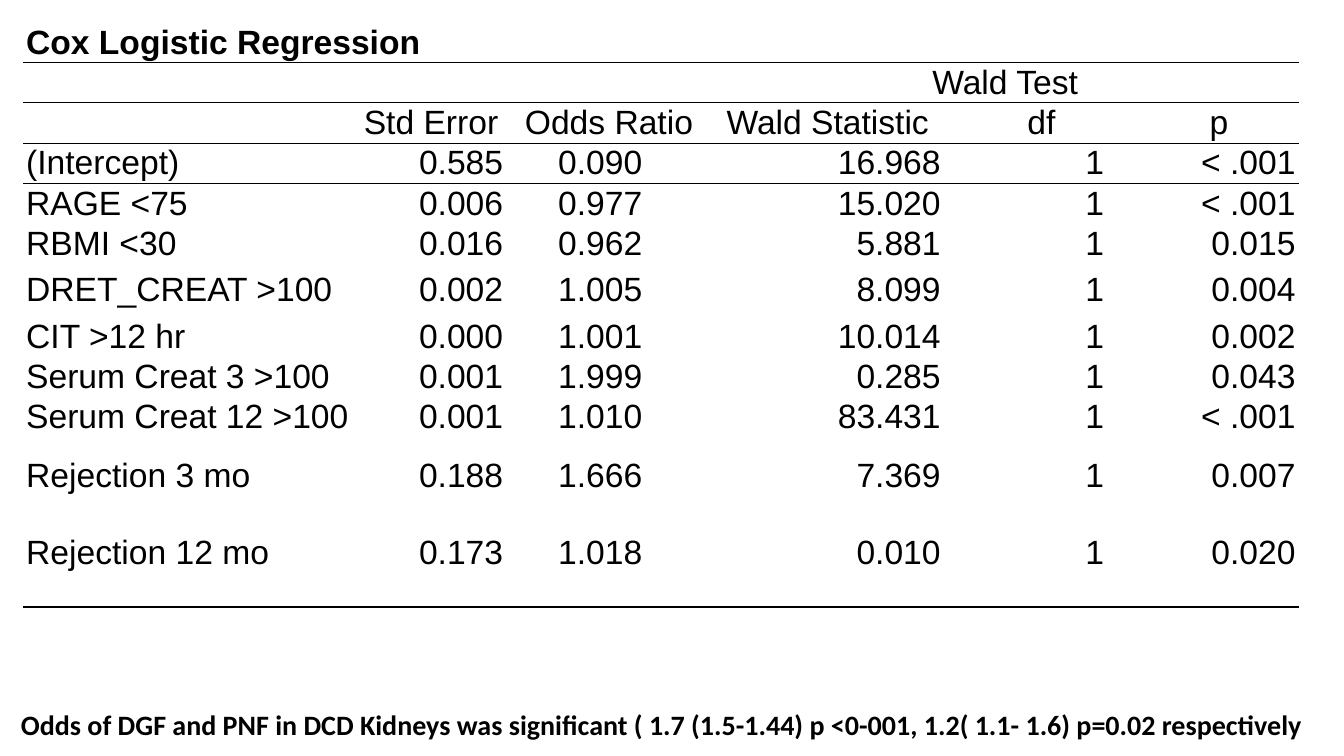
from lxml import etree
from pptx import Presentation, util as u
from pptx.dml.color import RGBColor
from pptx.enum import text
from pptx.oxml.ns import qn

PX = 9144  # one hundredth of an inch
BLACK = "000000"
LEFT, CENTER, RIGHT = text.PP_ALIGN.LEFT, text.PP_ALIGN.CENTER, text.PP_ALIGN.RIGHT
PLAIN_TABLE_STYLE = "{2D5ABB26-0587-4C30-8999-92F81FD0307C}"

COLUMN_WIDTHS = [330, 149, 138, 66, 230, 162, 32, 158]
ROW_HEIGHTS = [40] * 6 + [52] + [40] * 3 + [76, 76, 16]
VALUE_COLUMNS = [0, 1, 2, 4, 5, 7]
HEADINGS = {1: "Std Error", 2: "Odds Ratio", 4: "Wald Statistic", 5: "df", 7: "p"}
FIRST_RESULT_ROW = 3
RESULTS = [
    ("(Intercept)", "0.585", "0.090", "16.968", "1", "< .001"),
    ("RAGE <75", "0.006", "0.977", "15.020", "1", "< .001"),
    ("RBMI <30", "0.016", "0.962", "5.881", "1", "0.015"),
    ("DRET_CREAT >100", "0.002", "1.005", "8.099", "1", "0.004"),
    ("CIT >12 hr", "0.000", "1.001", "10.014", "1", "0.002"),
    ("Serum Creat 3 >100", "0.001", "1.999", "0.285", "1", "0.043"),
    ("Serum Creat 12 >100", "0.001", "1.010", "83.431", "1", "< .001"),
    ("Rejection 3 mo", "0.188", "1.666", "7.369", "1", "0.007"),
    ("Rejection 12 mo", "0.173", "1.018", "0.010", "1", "0.020"),
]
MERGES = [((0, 0), (0, 7)), ((1, 0), (1, 3)), ((1, 4), (1, 7)),
          ((2, 2), (2, 3)), ((2, 5), (2, 6)), ((12, 0), (12, 7))]
FOOTNOTE = ("Odds of DGF and PNF in DCD Kidneys was significant "
            "( 1.7 (1.5-1.44) p <0-001, 1.2( 1.1- 1.6) p=0.02 respectively")


def px(length):
    return u.Emu(length * PX)


def color(hex_code):
    return RGBColor.from_string(hex_code)


def write(frame, words, size=24, font="Arial", bold=False, align=LEFT, ink=BLACK):
    paragraph = frame.paragraphs[0]
    paragraph.alignment = align
    run = paragraph.add_run()
    run.text = words
    run.font.size = u.Pt(size)
    run.font.name = font
    run.font.bold = bold
    run.font.color.rgb = color(ink)


def add_border(cell, side, width):
    line = etree.Element(qn(f"a:{side}"), w=str(u.Pt(width)))
    fill = etree.SubElement(line, qn("a:solidFill"))
    etree.SubElement(fill, qn("a:srgbClr"), val=BLACK)
    cell._tc.get_or_add_tcPr().insert(0, line)


def rule_below(table, row, columns=range(8), width=0.75):
    """Draw a rule under a row, on both cells that share the edge."""
    for column in columns:
        add_border(table.cell(row, column), "lnB", width)
        if row + 1 < len(ROW_HEIGHTS):
            add_border(table.cell(row + 1, column), "lnT", width)


def prepare_cell(cell):
    cell.fill.background()
    cell.vertical_anchor = text.MSO_ANCHOR.MIDDLE
    cell.margin_left = cell.margin_right = px(3)
    cell.margin_top = cell.margin_bottom = px(1)


def shrink_empty(cell):
    """Keep an empty cell from stretching its row."""
    if not cell.text_frame.text:
        paragraph = cell.text_frame.paragraphs[0]._p
        etree.SubElement(paragraph, qn("a:endParaRPr"), sz="800")


def add_regression_table(slide):
    table = slide.shapes.add_table(
        len(ROW_HEIGHTS), len(COLUMN_WIDTHS), px(23), px(22),
        px(sum(COLUMN_WIDTHS)), px(sum(ROW_HEIGHTS))).table
    table.first_row = table.horz_banding = False
    table._tbl.tblPr.find(qn("a:tableStyleId")).text = PLAIN_TABLE_STYLE
    for column, width in zip(table.columns, COLUMN_WIDTHS):
        column.width = px(width)
    for row, height in zip(table.rows, ROW_HEIGHTS):
        row.height = px(height)
    for cell in table.iter_cells():
        prepare_cell(cell)
    for first, last in MERGES:
        table.cell(*first).merge(table.cell(*last))

    write(table.cell(0, 0).text_frame, "Cox Logistic Regression", bold=True)
    write(table.cell(1, 4).text_frame, "Wald Test", align=CENTER)
    for column, heading in HEADINGS.items():
        write(table.cell(2, column).text_frame, heading, align=CENTER)
    for row, result in enumerate(RESULTS, FIRST_RESULT_ROW):
        for column, value in zip(VALUE_COLUMNS, result):
            write(table.cell(row, column).text_frame, value,
                  align=RIGHT if column else LEFT)
    for cell in table.iter_cells():
        shrink_empty(cell)

    # Lower rules first: a cell's top border has to precede its bottom one.
    rule_below(table, 12, width=1.5)
    rule_below(table, 2)
    rule_below(table, 1, columns=range(4, 8))
    rule_below(table, 0)


def add_footnote(slide):
    frame = slide.shapes.add_textbox(px(11), px(697), px(1676), px(44)).text_frame
    frame.word_wrap = True
    frame.auto_size = text.MSO_AUTO_SIZE.SHAPE_TO_FIT_TEXT
    write(frame, FOOTNOTE, size=20, font="Calibri", bold=True)


def main():
    deck = Presentation()
    deck.slide_width, deck.slide_height = px(1333), px(750)
    slide = deck.slides.add_slide(deck.slide_layouts[6])
    add_regression_table(slide)
    add_footnote(slide)
    deck.save("out.pptx")


if __name__ == "__main__":
    main()
